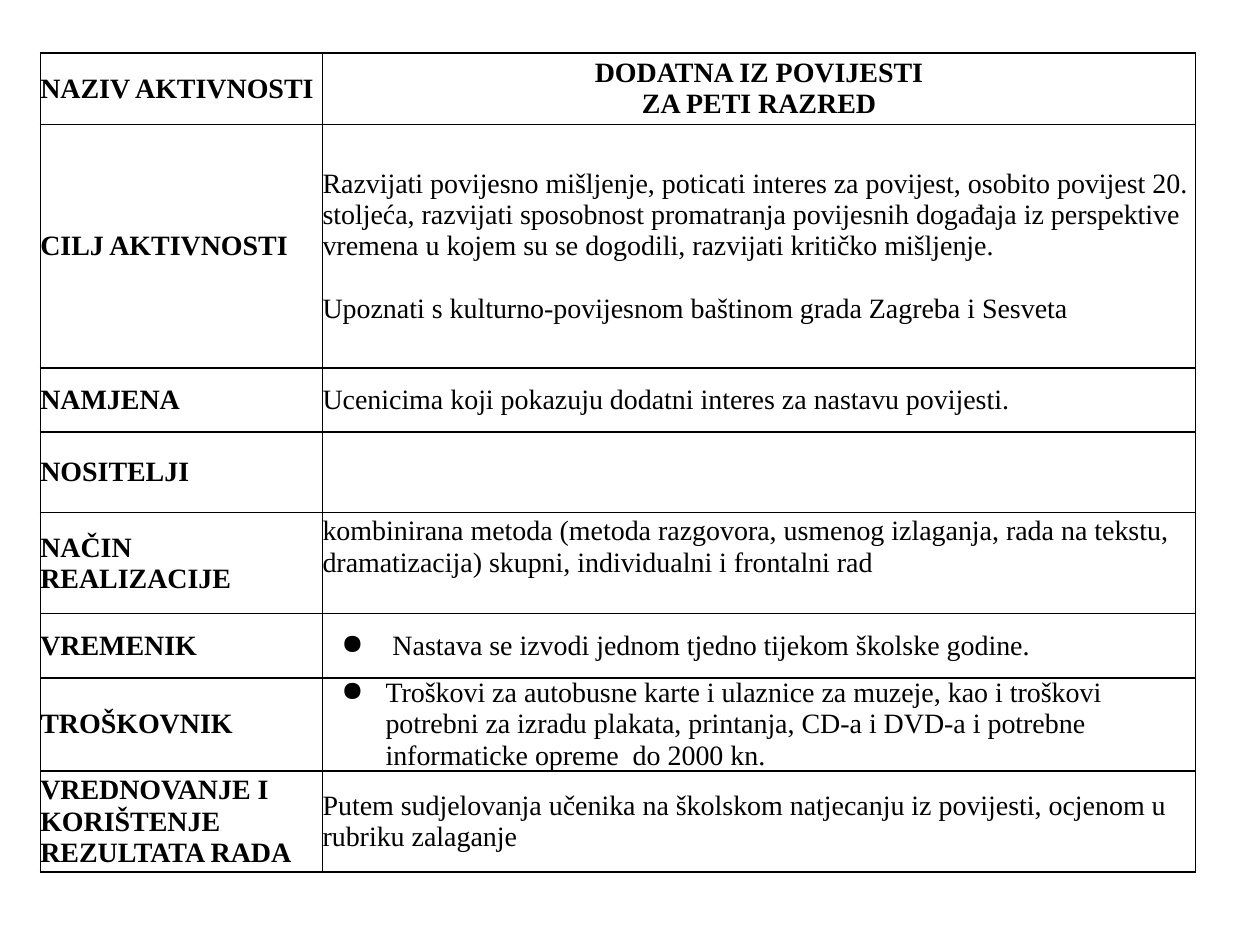
from lxml import etree
from pptx import Presentation
from pptx import util as u
from pptx.dml.color import RGBColor
from pptx.enum import text
from pptx.oxml import ns

BLACK = RGBColor(0x00, 0x00, 0x00)
FONT_NAME = "Times New Roman"
FONT_SIZE = u.Pt(16)
LINE_HEIGHT = u.Pt(18.4)

COLUMN_WIDTHS = (2.24, 6.93)
# Row height, label, paragraphs of the description
ROWS = (
    (0.57, "NAZIV AKTIVNOSTI", ("DODATNA IZ POVIJESTI", "ZA PETI RAZRED")),
    (1.93, "CILJ AKTIVNOSTI", (
        "Razvijati povijesno mišljenje, poticati interes za povijest, osobito povijest 20. "
        "stoljeća, razvijati sposobnost promatranja povijesnih događaja iz perspektive "
        "vremena u kojem su se dogodili, razvijati kritičko mišljenje.",
        "Upoznati s kulturno-povijesnom baštinom grada Zagreba i Sesveta")),
    (0.51, "NAMJENA", ("Ucenicima koji pokazuju dodatni interes za nastavu povijesti.",)),
    (0.64, "NOSITELJI", ()),
    (0.8, "NAČIN REALIZACIJE", (
        "kombinirana metoda (metoda razgovora, usmenog izlaganja, rada na tekstu, "
        "dramatizacija) skupni, individualni i frontalni rad",)),
    (0.51, "VREMENIK", (" Nastava se izvodi jednom tjedno tijekom školske godine.",)),
    (0.71, "TROŠKOVNIK", (
        "Troškovi za autobusne karte i ulaznice za muzeje, kao i troškovi potrebni za izradu "
        "plakata, printanja, CD-a i DVD-a i potrebne informaticke opreme  do 2000 kn.",)),
    (0.8, "VREDNOVANJE I KORIŠTENJE REZULTATA RADA", (
        "Putem sudjelovanja učenika na školskom natjecanju iz povijesti, ocjenom u rubriku "
        "zalaganje",)),
)
TITLE_ROW, GOAL_ROW, METHOD_ROW = 0, 1, 4
BULLET_ROWS = (5, 6)


def add_element(parent, tag, **attributes):
    return etree.SubElement(parent, ns.qn(tag), attributes)


def add_borders(cell):
    properties = cell._tc.get_or_add_tcPr()
    for index, side in enumerate(("a:lnL", "a:lnR", "a:lnT", "a:lnB")):
        line = etree.Element(ns.qn(side), w=str(u.Pt(1)))
        fill = add_element(line, "a:solidFill")
        add_element(fill, "a:srgbClr", val=str(BLACK))
        properties.insert(index, line)


def add_bullet(paragraph):
    """Give the paragraph a hanging bullet; call before setting its font."""
    properties = paragraph._p.get_or_add_pPr()
    properties.set("marL", str(u.Inches(0.5)))
    properties.set("indent", str(u.Inches(-0.35)))
    color = add_element(properties, "a:buClr")
    add_element(color, "a:srgbClr", val=str(BLACK))
    add_element(properties, "a:buChar", char="●")


def format_cell(cell):
    cell.margin_left = cell.margin_right = cell.margin_top = cell.margin_bottom = 0
    cell.vertical_anchor = text.MSO_ANCHOR.MIDDLE
    cell.fill.background()
    add_borders(cell)


def write_cell(cell, lines, bold=False, bullet=False, alignment=None):
    format_cell(cell)
    cell.text_frame.text = "\n".join(lines)
    for paragraph in cell.text_frame.paragraphs:
        if bullet:
            add_bullet(paragraph)
        paragraph.alignment = alignment
        font = paragraph.font
        font.name, font.size, font.bold = FONT_NAME, FONT_SIZE, bold
        font.color.rgb = BLACK


def add_activity_table(slide):
    frame = slide.shapes.add_table(
        len(ROWS), len(COLUMN_WIDTHS), u.Inches(0.32), u.Inches(0.42),
        u.Inches(sum(COLUMN_WIDTHS)), u.Inches(sum(row[0] for row in ROWS)))
    table = frame.table
    table.first_row = table.horz_banding = False
    for column, width in zip(table.columns, COLUMN_WIDTHS):
        column.width = u.Inches(width)
    for index, (height, label, lines) in enumerate(ROWS):
        table.rows[index].height = u.Inches(height)
        is_title = index == TITLE_ROW
        write_cell(table.cell(index, 0), [label], bold=True)
        write_cell(table.cell(index, 1), lines, bold=is_title,
                   bullet=index in BULLET_ROWS,
                   alignment=text.PP_ALIGN.CENTER if is_title else None)
    table.cell(GOAL_ROW, 1).text_frame.paragraphs[1].space_before = LINE_HEIGHT
    table.cell(METHOD_ROW, 1).margin_bottom = LINE_HEIGHT


def main():
    presentation = Presentation()
    presentation.slide_width, presentation.slide_height = u.Inches(10), u.Inches(7.5)
    slide = presentation.slides.add_slide(presentation.slide_layouts[6])
    add_activity_table(slide)
    presentation.save("out.pptx")


if __name__ == "__main__":
    main()
